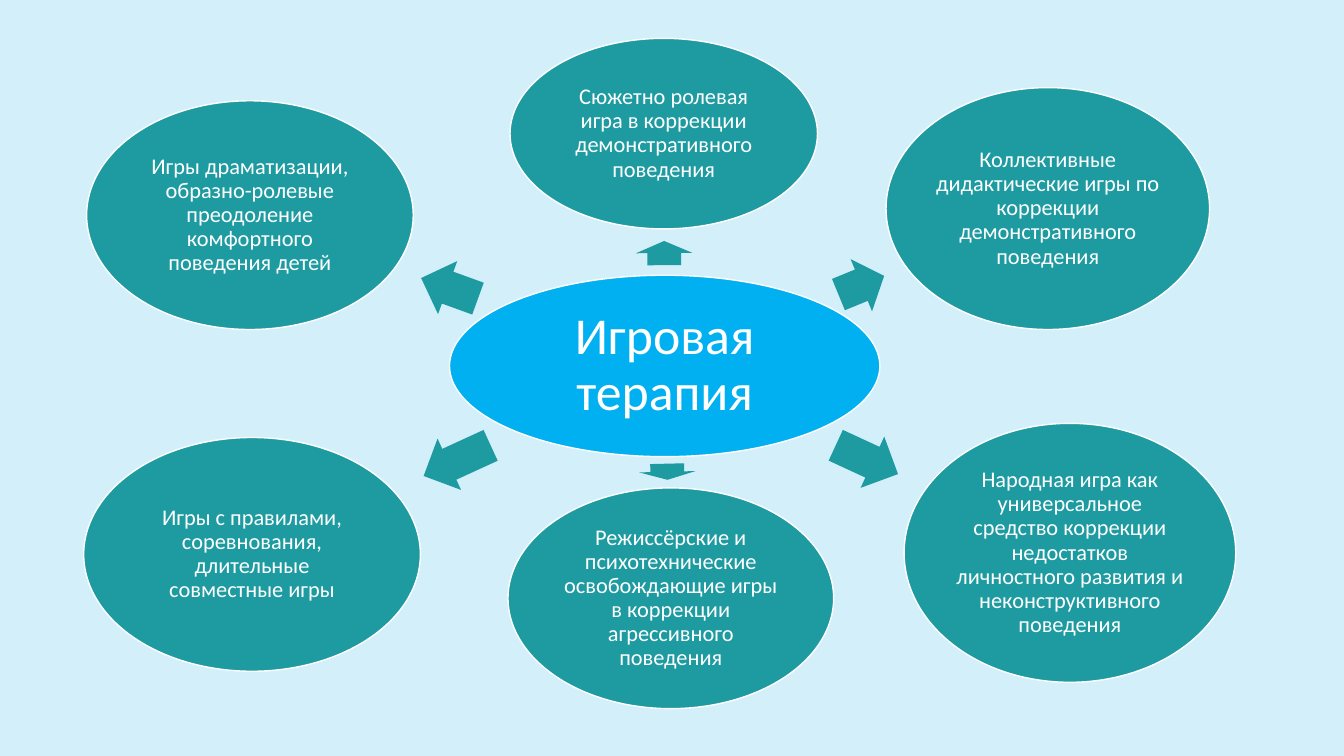
from pptx import Presentation
from pptx.dml.color import RGBColor
from pptx.enum.shapes import MSO_SHAPE
from pptx.enum.text import MSO_ANCHOR, PP_ALIGN
from pptx.util import Pt

BACKGROUND = RGBColor(0xD2, 0xEF, 0xFA)
BLUE = RGBColor(0x00, 0xB0, 0xF0)
TEAL = RGBColor(0x1D, 0x9B, 0xA1)
WHITE = RGBColor(0xFF, 0xFF, 0xFF)

# Each game: text, ellipse (left, top, width, height),
# arrow (left, top, length, rotation)
GAMES = [
    ("Сюжетно ролевая игра в коррекции демонстративного поведения",
     (364.3, 27.4, 219.6, 136.1), (465.8, 160.6, 17.3, 269.6)),
    ("Коллективные дидактические игры по коррекции демонстративного поведения",
     (632.9, 62.6, 231.1, 172.8), (597.6, 183.6, 35.3, 337.7)),
    ("Народная игра как универсальное средство коррекции недостатков "
     "личностного развития и неконструктивного поведения",
     (645.8, 302.4, 236.9, 185), (594.7, 308.2, 49, 24.8)),
    ("Режиссёрские и психотехнические освобождающие игры в коррекции "
     "агрессивного поведения",
     (362.9, 348.5, 232.6, 157.7), (470.9, 316.8, 11.5, 88.6)),
    ("Игры с правилами, соревнования, длительные совместные игры",
     (59.8, 312.5, 240.5, 167), (300.2, 308.9, 52.6, 155.4)),
    ("Игры драматизации, образно-ролевые преодоление комфортного "
     "поведения детей",
     (61.9, 72, 233.3, 163.4), (299.5, 185.8, 43.2, 199.9)),
]


class RadialSlide:
    font_name = "Calibri"
    arrow_width = 40.3

    def __init__(self, slide):
        self.slide = slide
        slide.background.fill.solid()
        slide.background.fill.fore_color.rgb = BACKGROUND

    def add_filled(self, preset, box, color):
        figure = self.slide.shapes.add_shape(preset, *(Pt(v) for v in box))
        figure.shadow.inherit = False
        figure.fill.solid()
        figure.fill.fore_color.rgb = color
        return figure

    def add_ellipse(self, text, box, color=TEAL, size=16, margin=1.6):
        ellipse = self.add_filled(MSO_SHAPE.OVAL, box, color)
        ellipse.line.color.rgb = WHITE
        ellipse.line.width = Pt(1)
        frame = ellipse.text_frame
        frame.text = text
        frame.word_wrap = True
        frame.vertical_anchor = MSO_ANCHOR.MIDDLE
        frame.margin_left = frame.margin_right = Pt(margin)
        frame.margin_top = frame.margin_bottom = Pt(margin)
        paragraph = frame.paragraphs[0]
        paragraph.alignment = PP_ALIGN.CENTER
        paragraph.line_spacing = 0.9
        font = paragraph.runs[0].font
        font.name = self.font_name
        font.size = Pt(size)
        font.color.rgb = WHITE

    def add_arrow(self, left, top, length, rotation):
        box = (left, top, length, self.arrow_width)
        arrow = self.add_filled(MSO_SHAPE.RIGHT_ARROW, box, TEAL)
        arrow.line.fill.background()
        arrow.adjustments[0] = 0.6
        arrow.adjustments[1] = 0.5
        arrow.rotation = rotation


def main():
    presentation = Presentation()
    presentation.slide_width = Pt(960)
    presentation.slide_height = Pt(540)
    therapy = RadialSlide(
        presentation.slides.add_slide(presentation.slide_layouts[6]))

    # Central idea
    therapy.add_ellipse("Игровая терапия", (321.1, 196.6, 307.4, 129.6),
                        color=BLUE, size=37, margin=3.6)

    # Kinds of games around it
    for game, ellipse_box, arrow_place in GAMES:
        therapy.add_arrow(*arrow_place)
        therapy.add_ellipse(game, ellipse_box)

    presentation.save("out.pptx")


if __name__ == "__main__":
    main()
